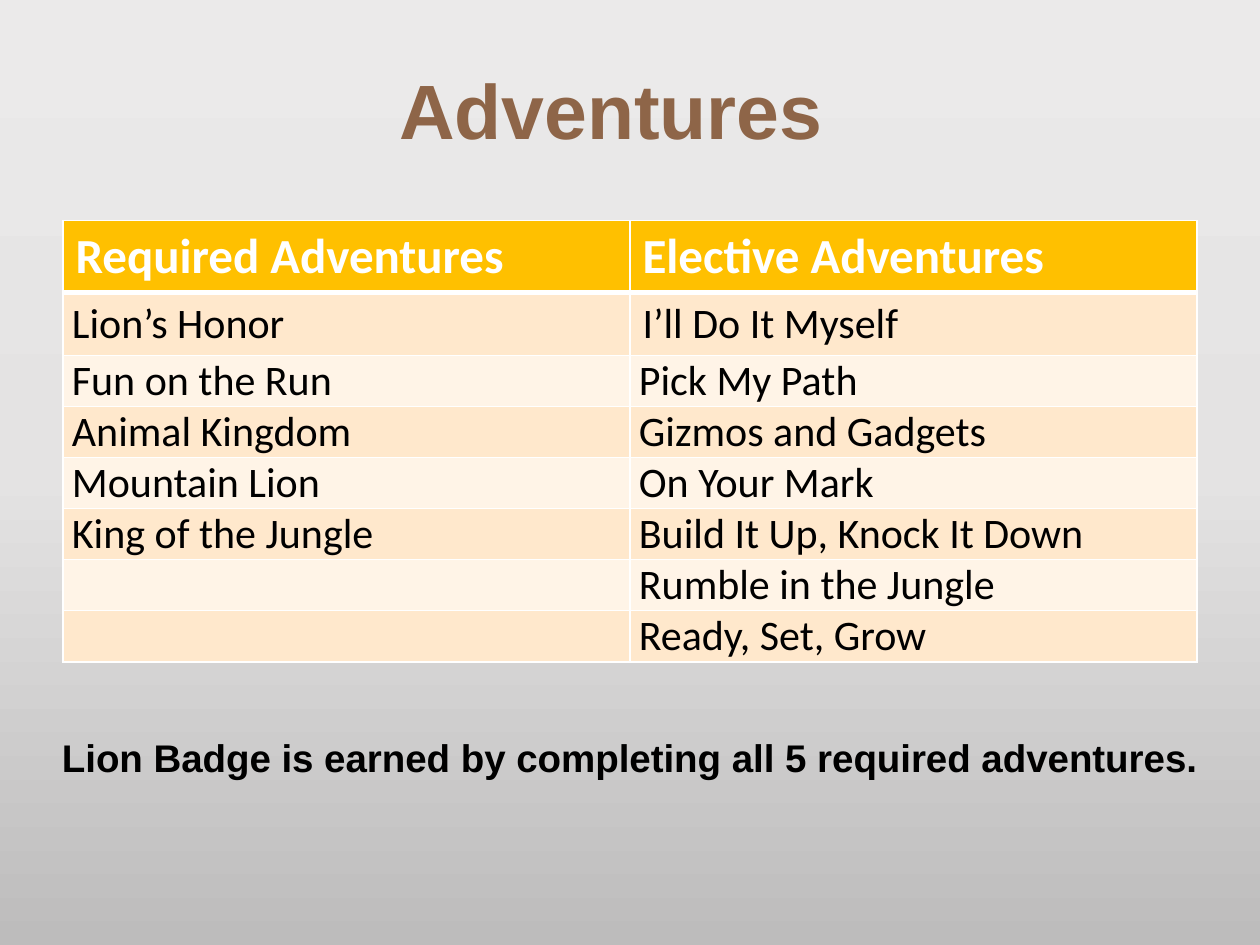
import copy
import pptx
import pptx.util
import pptx.dml.color
import pptx.enum.text
import pptx.oxml
import pptx.oxml.ns

Cm = pptx.util.Cm
Pt = pptx.util.Pt
RGBColor = pptx.dml.color.RGBColor
Align = pptx.enum.text.PP_ALIGN
Anchor = pptx.enum.text.MSO_ANCHOR

BROWN = RGBColor(0x8E, 0x65, 0x48)
BLACK = RGBColor(0, 0, 0)
WHITE = RGBColor(0xFF, 0xFF, 0xFF)
GOLD = RGBColor(0xFF, 0xC0, 0x00)
PEACH = RGBColor(0xFF, 0xE8, 0xCC)
CREAM = RGBColor(0xFF, 0xF4, 0xE7)
LIGHT = RGBColor(0xEB, 0xEA, 0xEA)
SILVER = RGBColor(0xE4, 0xE3, 0xE3)
GREY = RGBColor(0xBD, 0xBC, 0xBC)

ROWS = [
    ("Required Adventures", "Elective Adventures"),
    ("Lion’s Honor", "I’ll Do It Myself"),
    ("Fun on the Run", "Pick My Path"),
    ("Animal Kingdom", "Gizmos and Gadgets"),
    ("Mountain Lion", "On Your Mark"),
    ("King of the Jungle", "Build It Up, Knock It Down"),
    ("", "Rumble in the Jungle"),
    ("", "Ready, Set, Grow"),
]


def add_run(para, text, font, size, color, bold):
    run = para.add_run()
    run.text = text
    run.font.name = font
    run.font.size = Pt(size)
    run.font.color.rgb = color
    run.font.bold = bold


def paint_back(slide):
    fill = slide.background.fill
    fill.gradient()
    fill.gradient_angle = 270
    stops = slide.element.find(".//" + pptx.oxml.ns.qn("a:gsLst"))
    stops.insert(1, copy.deepcopy(stops[0]))
    for stop, place, color in zip(fill.gradient_stops, (0, 0.5, 1), (LIGHT, SILVER, GREY)):
        stop.position = place
        stop.color.rgb = color


def set_title(slide, text):
    title = slide.shapes.title
    title.left, title.top = Cm(1.37), Cm(0.46)
    title.width, title.height = Cm(21.9), Cm(3.68)
    title.text_frame.vertical_anchor = Anchor.MIDDLE
    para = title.text_frame.paragraphs[0]
    para.alignment = Align.CENTER
    para.line_spacing = 0.9
    add_run(para, text, "Arial", 44, BROWN, True)


def add_note(slide, text):
    box = slide.shapes.add_textbox(Cm(0), Cm(14.68), Cm(25.4), Cm(1.19))
    box.text_frame.word_wrap = True
    para = box.text_frame.paragraphs[0]
    para.alignment = Align.CENTER
    add_run(para, text, "Arial", 22, BLACK, True)


def add_edge(cell, side, width):
    cell._tc.get_or_add_tcPr().append(pptx.oxml.parse_xml(
        f'<a:ln{side} {pptx.oxml.ns.nsdecls("a")} w="{Pt(width)}">'
        f'<a:solidFill><a:srgbClr val="{WHITE}"/></a:solidFill></a:ln{side}>'))


def fill_cell(cell, text, row, col):
    head = row == 0
    for side in "LRTB":
        thick = (side == "B" and head) or (side == "T" and row == 1)
        add_edge(cell, side, 3 if thick else 1)
    cell.fill.solid()
    cell.fill.fore_color.rgb = GOLD if head else PEACH if row % 2 else CREAM
    if not head and (row, col) != (1, 1):
        cell.vertical_anchor = Anchor.MIDDLE
        cell.margin_left = cell.margin_right = Cm(0.18)
        cell.margin_top = cell.margin_bottom = Cm(0)
    if text:
        para = cell.text_frame.paragraphs[0]
        add_run(para, text, "Calibri", 28 if head else 24, WHITE if head else BLACK, head)


def add_grid(slide):
    highs = [1.43, 1.25] + [1.03] * (len(ROWS) - 2)
    frame = slide.shapes.add_table(len(ROWS), 2, Cm(1.27), Cm(4.45), Cm(22.86), Cm(sum(highs)))
    table = frame.table
    for row, (texts, high) in enumerate(zip(ROWS, highs)):
        table.rows[row].height = Cm(high)
        for col, text in enumerate(texts):
            fill_cell(table.cell(row, col), text, row, col)


def main():
    deck = pptx.Presentation()
    deck.slide_width, deck.slide_height = Cm(25.4), Cm(19.05)
    slide = deck.slides.add_slide(deck.slide_layouts[5])
    paint_back(slide)
    set_title(slide, "Adventures")
    add_note(slide, "Lion Badge is earned by completing all 5 required adventures.")
    add_grid(slide)
    deck.save("out.pptx")


if __name__ == "__main__":
    main()
